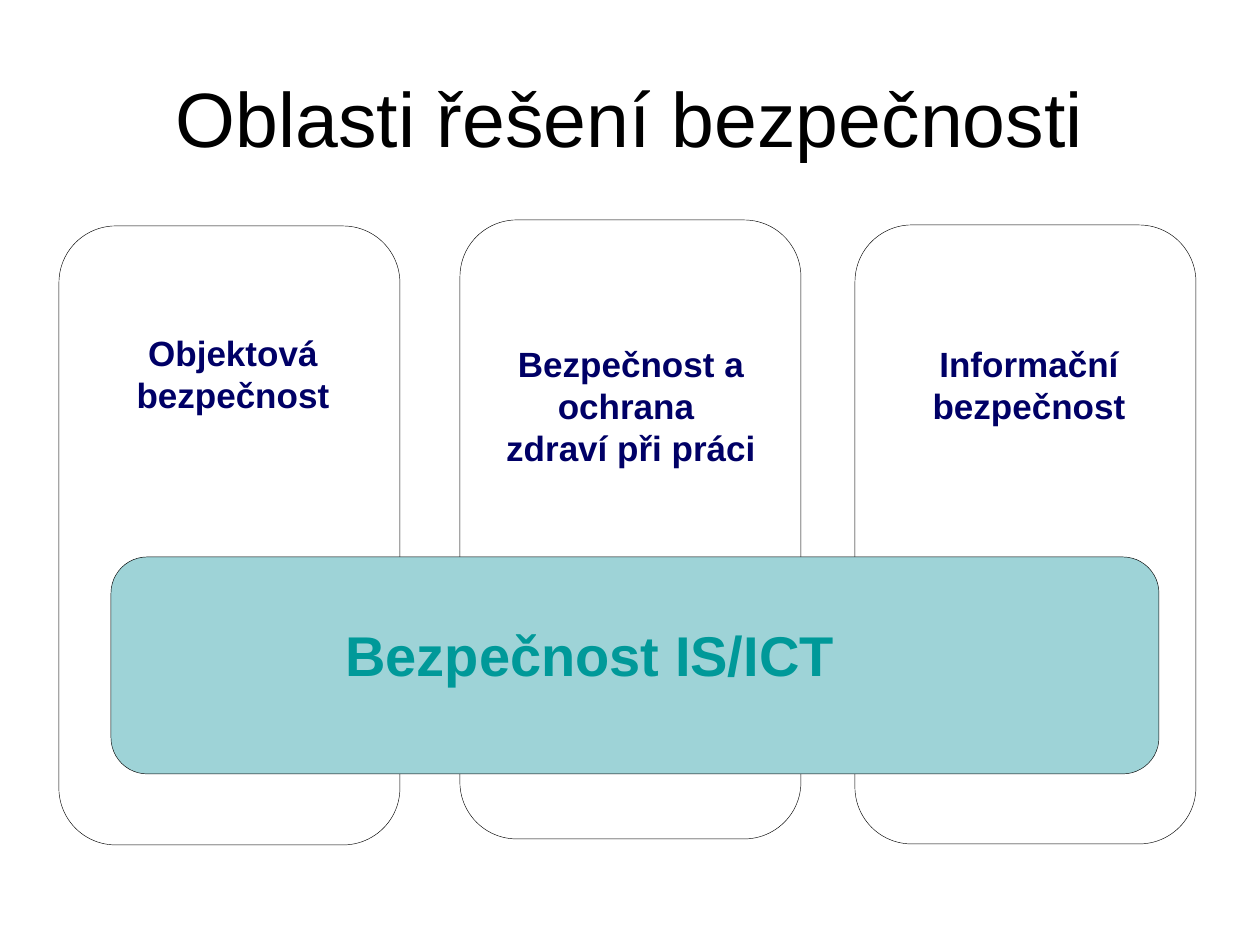
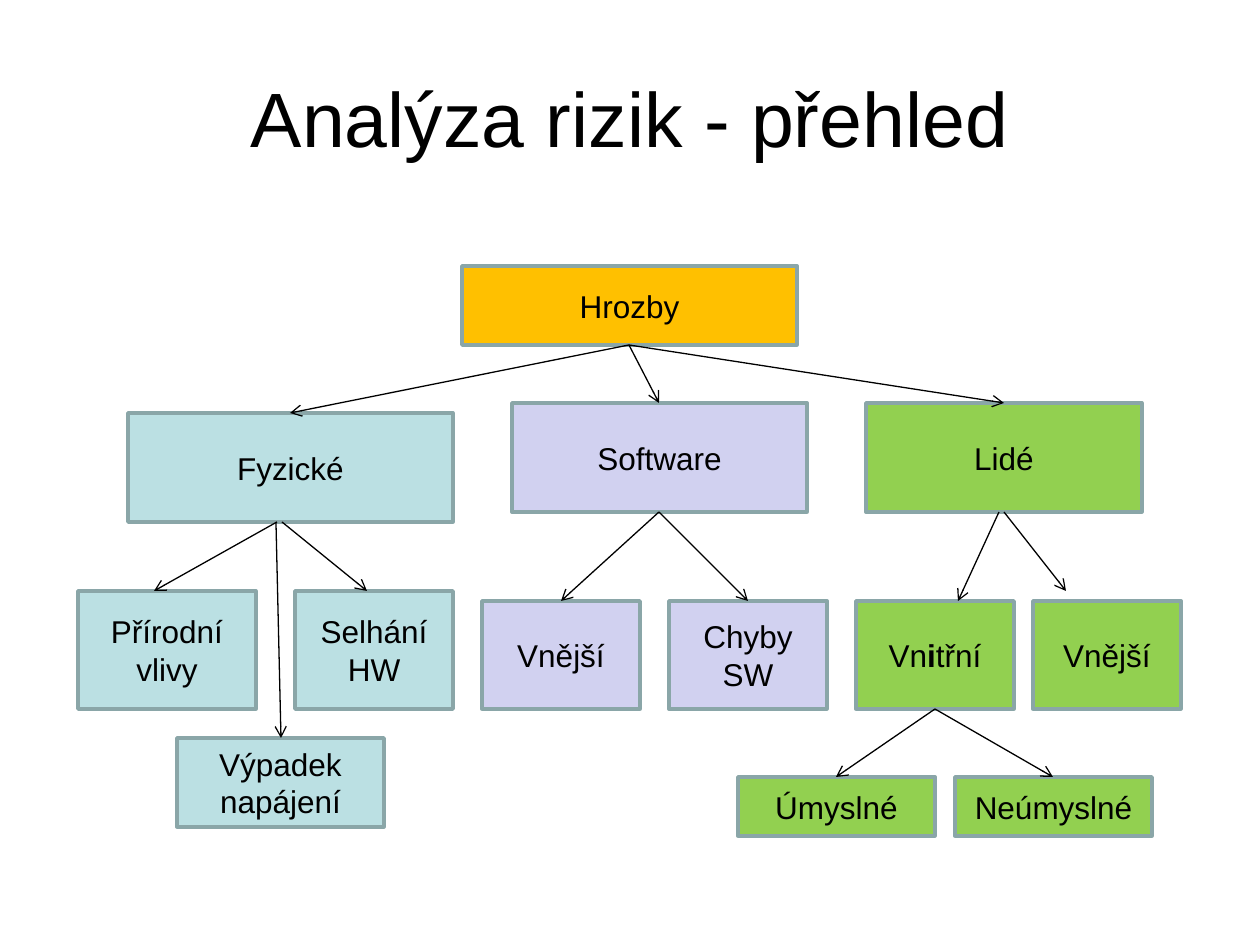
from dataclasses import dataclass
from typing import NamedTuple, Optional

from lxml.etree import SubElement
from pptx import Presentation
from pptx.dml.color import RGBColor
from pptx.enum.shapes import MSO_CONNECTOR, MSO_SHAPE
from pptx.enum.text import MSO_ANCHOR, PP_ALIGN
from pptx.oxml.ns import qn
from pptx.util import Emu, Pt

PX = 914400 / 126
FONT = "Arial"
COLORS = {
    "black": "000000",
    "white": "FFFFFF",
    "navy": "000066",
    "teal": "009999",
    "band": "9ED3D7",
    "border": "8AA6A8",
    "threat": "FFC000",
    "physical": "BBE0E3",
    "software": "D1D1F0",
    "people": "92D050",
}


class Box(NamedTuple):
    """A rectangle in px."""
    left: int
    top: int
    width: int
    height: int

    @property
    def center(self) -> int:
        return self.left + self.width // 2

    @property
    def bottom(self) -> int:
        return self.top + self.height


@dataclass(frozen=True)
class Area:
    """A security area: its column and its caption."""
    column: Box
    caption: Box
    text: str


@dataclass(frozen=True)
class Node:
    """A threat box, with the arrow from its parent shifted by start_dx, end_dx and end_dy."""
    text: str
    color: str
    box: Box
    parent: Optional["Node"] = None
    start_dx: int = 0
    end_dx: int = 0
    end_dy: int = 0


TITLE_BOX = Box(63, 38, 1134, 157)
COLUMN_W, COLUMN_H = 341, 619
AREAS = [
    Area(Box(855, 225, COLUMN_W, COLUMN_H), Box(886, 336, 286, 97),
         "Informační bezpečnost"),
    Area(Box(460, 220, COLUMN_W, COLUMN_H), Box(493, 336, 276, 140),
         "Bezpečnost a ochrana \nzdraví při práci"),
    Area(Box(59, 226, COLUMN_W, COLUMN_H), Box(69, 325, 328, 97),
         "Objektová bezpečnost"),
]
BAND = Box(111, 557, 1048, 217)
BAND_CAPTION = Box(331, 614, 518, 81)

THREATS = Node("Hrozby", "threat", Box(462, 266, 335, 79))
PHYSICAL = Node("Fyzické", "physical", Box(128, 413, 325, 109), THREATS)
SOFTWARE = Node("Software", "software", Box(512, 403, 295, 109), THREATS)
PEOPLE = Node("Lidé", "people", Box(866, 403, 276, 109), THREATS)
INTERNAL = Node("Vn*i*třní", "people", Box(856, 601, 158, 108), PEOPLE, -5, 23)
NODES = [
    THREATS, PHYSICAL, SOFTWARE, PEOPLE, INTERNAL,
    Node("Přírodní\nvlivy", "physical", Box(78, 591, 178, 118), PHYSICAL, -13, -13),
    Node("Selhání\nHW", "physical", Box(295, 591, 158, 118), PHYSICAL, -8, -7),
    Node("Výpadek\nnapájení", "physical", Box(177, 738, 207, 89), PHYSICAL, -14, 1),
    Node("Vnější", "software", Box(482, 601, 158, 108), SOFTWARE),
    Node("Chyby SW", "software", Box(669, 601, 158, 108), SOFTWARE),
    Node("Vnější", "people", Box(1033, 601, 148, 108), PEOPLE, 0, -41, -10),
    Node("Úmyslné", "people", Box(738, 777, 197, 59), INTERNAL),
    Node("Neúmyslné", "people", Box(955, 777, 197, 59), INTERNAL),
]


def px(value: int) -> Emu:
    """Turn px into EMU."""
    return Emu(round(value * PX))


def rgb(name: str) -> RGBColor:
    """Look up a colour."""
    return RGBColor.from_string(COLORS[name])


def write(shape, text: str, size: int, color: str, bold: bool = False,
          anchor=MSO_ANCHOR.TOP, wrap: bool = True) -> None:
    """Write centred paragraphs; asterisks enclose bold parts."""
    tf = shape.text_frame
    tf.word_wrap = wrap
    tf.vertical_anchor = anchor
    for i, line in enumerate(text.split("\n")):
        p = tf.add_paragraph() if i else tf.paragraphs[0]
        p.alignment = PP_ALIGN.CENTER
        p.font.name, p.font.size, p.font.bold = FONT, Pt(size), bold
        p.font.color.rgb = rgb(color)
        for j, part in enumerate(line.split("*")):
            r = p.add_run()
            r.text = part
            if j % 2:
                r.font.bold = True


def add_text(s, box: Box, text: str, size: int, color: str, **style) -> None:
    """Add a text box."""
    write(s.shapes.add_textbox(*map(px, box)), text, size, color, **style)


def add_panel(s, kind, box: Box, fill: str, line: str, weight: float):
    """Add a filled and outlined shape."""
    sp = s.shapes.add_shape(kind, *map(px, box))
    sp.shadow.inherit = False
    sp.fill.solid()
    sp.fill.fore_color.rgb = rgb(fill)
    sp.line.color.rgb = rgb(line)
    sp.line.width = Pt(weight)
    return sp


def add_rounded(s, box: Box, fill: str) -> None:
    """Add a thinly outlined rounded panel."""
    add_panel(s, MSO_SHAPE.FLOWCHART_ALTERNATE_PROCESS, box, fill, "black", 0.25)


def add_arrow(s, node: Node) -> None:
    """Draw the arrow from a node's parent to the node."""
    start, end = node.parent.box, node.box
    cx = s.shapes.add_connector(
        MSO_CONNECTOR.STRAIGHT,
        px(start.center + node.start_dx), px(start.bottom),
        px(end.center + node.end_dx), px(end.top + node.end_dy))
    cx.line.color.rgb = rgb("black")
    cx.line.width = Pt(0.75)
    SubElement(cx.line._get_or_add_ln(), qn("a:tailEnd"), type="arrow")
    SubElement(cx._element.spPr, qn("a:effectLst"))


def add_slide(prs, title: str):
    """Add a blank slide with a title."""
    s = prs.slides.add_slide(prs.slide_layouts[6])
    add_text(s, TITLE_BOX, title, 44, "black", anchor=MSO_ANCHOR.MIDDLE)
    return s


def build_areas(prs) -> None:
    """Build the slide of security areas."""
    s = add_slide(prs, "Oblasti řešení bezpečnosti")
    for area in AREAS:
        add_rounded(s, area.column, "white")
    for area in AREAS:
        add_text(s, area.caption, area.text, 20, "navy", bold=True)
    add_rounded(s, BAND, "band")
    add_text(s, BAND_CAPTION, "Bezpečnost IS/ICT", 32, "teal", bold=True, wrap=False)


def build_threats(prs) -> None:
    """Build the tree of threats."""
    s = add_slide(prs, "Analýza rizik - přehled")
    for node in NODES:
        sp = add_panel(s, MSO_SHAPE.RECTANGLE, node.box, node.color, "border", 2)
        write(sp, node.text, 18, "black", anchor=MSO_ANCHOR.MIDDLE)
    for node in NODES:
        if node.parent:
            add_arrow(s, node)


def main() -> None:
    """Build and save the presentation."""
    prs = Presentation()
    prs.slide_width, prs.slide_height = px(1260), px(945)
    build_areas(prs)
    build_threats(prs)
    prs.save("out.pptx")


if __name__ == "__main__":
    main()
